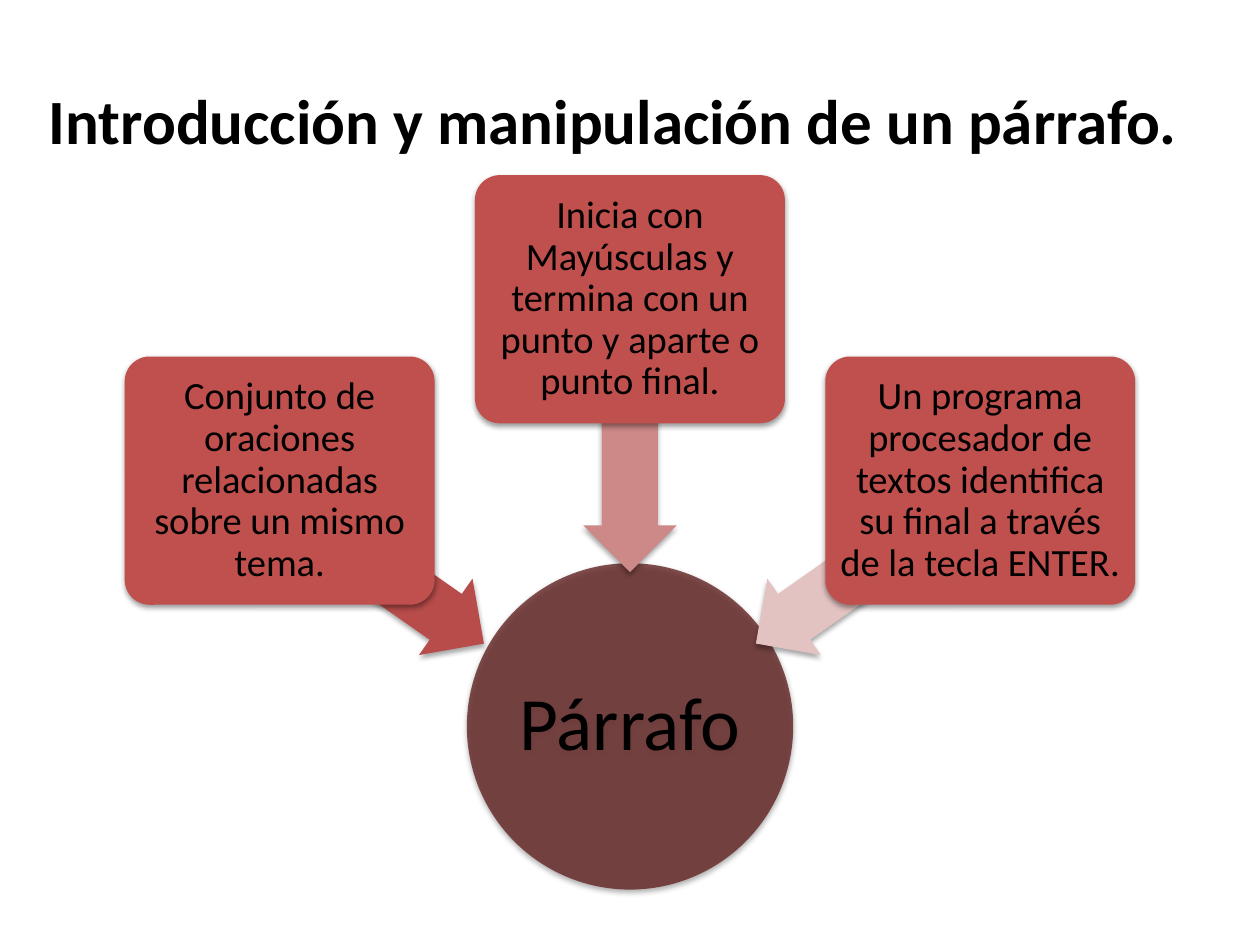
from dataclasses import dataclass

from lxml.etree import SubElement
from pptx import Presentation
from pptx.dml.color import RGBColor
from pptx.enum.shapes import MSO_SHAPE
from pptx.enum.text import MSO_ANCHOR, PP_ALIGN
from pptx.oxml.ns import qn
from pptx.util import Pt


@dataclass(frozen=True)
class Theme:
    font: str = "Calibri"
    ink: str = "000000"
    idea_fill: str = "C0504D"
    topic_fill: str = "632523"
    topic_opacity: int = 80
    title_size: int = 36
    topic_size: int = 43
    idea_size: int = 22


THEME = Theme()
CENTER_X = 360
IDEA_STEP = 200.16
IDEA_WIDTH, IDEA_HEIGHT = 177.12, 141.84
ARROW_LENGTH, ARROW_WIDTH = 142.56, 53.28
TOPIC_DIAMETER = 186.48

IDEAS = [
    ("Conjunto de oraciones relacionadas sobre un mismo tema.",
     -1, 203.76, -141.84, 326.88, 215, "B74C4A"),
    ("Inicia con Mayúsculas y termina con un punto y aparte o punto final.",
     0, 100.08, 0, 255.6, 270, "CC8987"),
    ("Un programa procesador de textos identifica su final a través de la tecla ENTER.",
     1, 203.76, 130.32, 326.88, 325, "E3C3C2"),
]


def write_text(shape, wording, size, inset, bold=False, line_spacing=None):
    frame = shape.text_frame
    frame.word_wrap = True
    frame.vertical_anchor = MSO_ANCHOR.MIDDLE
    frame.margin_left = frame.margin_right = Pt(inset)
    frame.margin_top = frame.margin_bottom = Pt(inset)
    paragraph = frame.paragraphs[0]
    paragraph.alignment = PP_ALIGN.CENTER
    paragraph.line_spacing = line_spacing
    run = paragraph.add_run()
    run.text = wording
    run.font.name = THEME.font
    run.font.size = Pt(size)
    run.font.bold = bold
    run.font.color.rgb = RGBColor.from_string(THEME.ink)


def add_shadow(shape, distance, opacity):
    shape.shadow.inherit = False
    effects = shape.element.spPr.find(qn("a:effectLst"))
    shadow = SubElement(effects, qn("a:outerShdw"), blurRad=str(Pt(3.1)),
                        dist=str(Pt(distance)), dir="5400000", rotWithShape="0")
    color = SubElement(shadow, qn("a:srgbClr"), val="000000")
    SubElement(color, qn("a:alpha"), val=str(opacity * 1000))


def add_figure(slide, kind, left, top, width, height, fill, distance=1.6, opacity=38):
    figure = slide.shapes.add_shape(kind, Pt(left), Pt(top), Pt(width), Pt(height))
    figure.fill.solid()
    figure.fill.fore_color.rgb = RGBColor.from_string(fill)
    figure.line.fill.background()
    add_shadow(figure, distance, opacity)
    return figure


def add_title(slide, wording):
    title = slide.shapes.add_textbox(Pt(14.4), Pt(31.68), Pt(680.4), Pt(73.44))
    write_text(title, wording, THEME.title_size, 3.6, bold=True)


def add_topic(slide, wording):
    topic = add_figure(slide, MSO_SHAPE.OVAL, CENTER_X - TOPIC_DIAMETER / 2, 321.84,
                       TOPIC_DIAMETER, TOPIC_DIAMETER, THEME.topic_fill)
    color = topic.element.spPr.find(qn("a:solidFill"))[0]
    SubElement(color, qn("a:alpha"), val=str(THEME.topic_opacity * 1000))
    write_text(topic, wording, THEME.topic_size, 2.16, line_spacing=0.9)


def add_arrow(slide, offset, middle, rotation, fill):
    arrow = add_figure(slide, MSO_SHAPE.LEFT_ARROW, CENTER_X + offset - ARROW_LENGTH / 2,
                       middle - ARROW_WIDTH / 2, ARROW_LENGTH, ARROW_WIDTH, fill, 1.8, 35)
    arrow.adjustments[0] = 0.6
    arrow.adjustments[1] = 0.5
    arrow.rotation = rotation


def add_idea(slide, wording, column, top):
    left = CENTER_X + column * IDEA_STEP - IDEA_WIDTH / 2
    idea = add_figure(slide, MSO_SHAPE.ROUNDED_RECTANGLE, left, top,
                      IDEA_WIDTH, IDEA_HEIGHT, THEME.idea_fill)
    idea.adjustments[0] = 0.1
    write_text(idea, wording, THEME.idea_size, 3.6, line_spacing=0.9)


def main():
    deck = Presentation()
    deck.slide_width, deck.slide_height = Pt(720), Pt(540)
    slide = deck.slides.add_slide(deck.slide_layouts[6])
    add_title(slide, "Introducción y manipulación de un párrafo. ")
    add_topic(slide, "Párrafo")
    for wording, column, top, offset, middle, rotation, arrow_fill in IDEAS:
        add_arrow(slide, offset, middle, rotation, arrow_fill)
        add_idea(slide, wording, column, top)
    deck.save("out.pptx")


if __name__ == "__main__":
    main()
